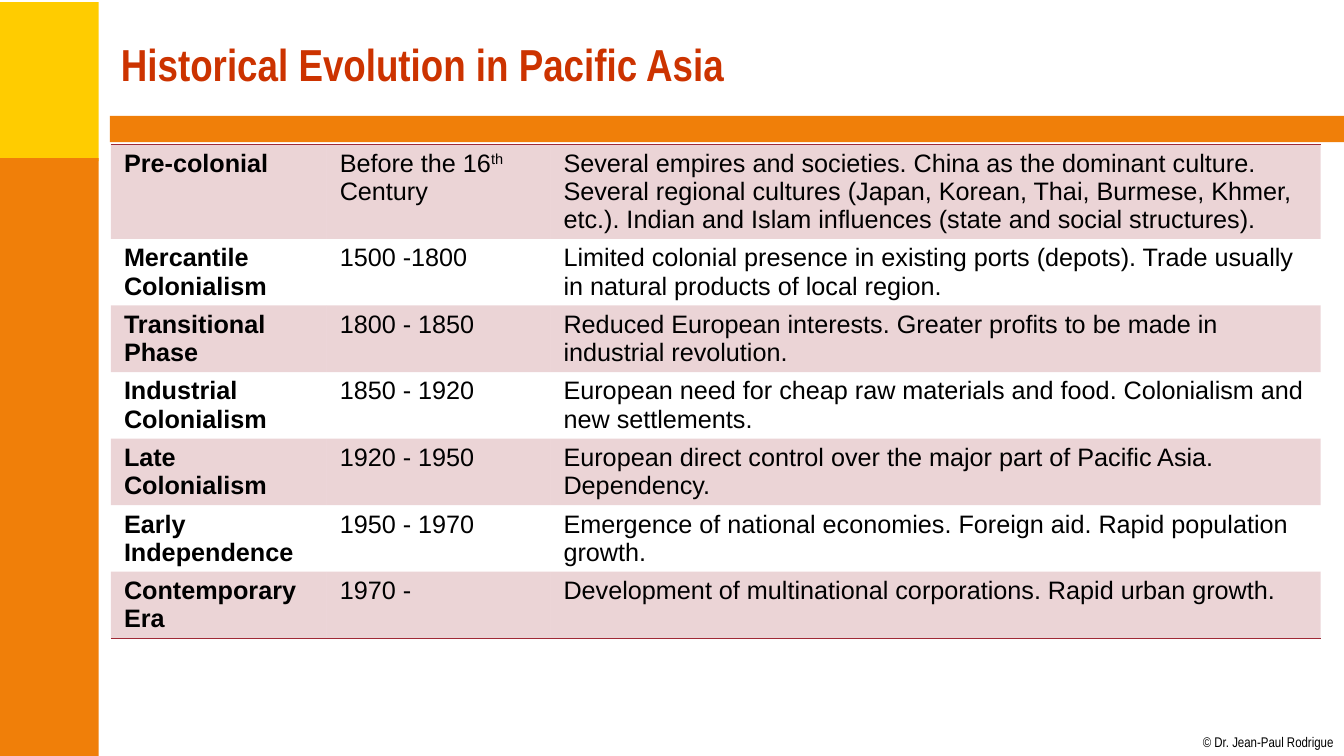
from dataclasses import dataclass

from lxml.etree import SubElement as Sub
from pptx import Presentation
from pptx.dml.color import RGBColor as Rgb
from pptx.enum.text import MSO_ANCHOR as Anchor, PP_ALIGN as Align
from pptx.enum.shapes import MSO_SHAPE as Kind
from pptx.oxml import parse_xml
from pptx.oxml.ns import nsdecls, qn
from pptx.util import Inches, Pt

HUES = {"gold": "FFCC00", "orange": "F07F09", "title": "CC3300",
        "wine": "9F2936", "text": "000000"}
PLAIN = "{2D5ABB26-0587-4C30-8999-92F81FD0307C}"  # table style without grid
WIDTHS = (2.14, 2.22, 7.64)


@dataclass
class Bar:
    left: float
    top: float
    width: float
    height: float
    hue: str


@dataclass
class Era:
    name: str
    years: str  # text between ^ marks is raised
    note: str


BARS = [
    Bar(-0.02, 0.02, 1, 1.58, "gold"),
    Bar(-0.02, 1.57, 1, 5.93, "orange"),
    Bar(1.09, 1.15, 12.24, 0.26, "orange"),
]
ERAS = [
    Era("Pre-colonial", "Before the 16^th^ Century",
        "Several empires and societies. China as the dominant culture. "
        "Several regional cultures (Japan, Korean, Thai, Burmese, Khmer, etc.). "
        "Indian and Islam influences (state and social structures)."),
    Era("Mercantile Colonialism", "1500 -1800",
        "Limited colonial presence in existing ports (depots). "
        "Trade usually in natural products of local region."),
    Era("Transitional Phase", "1800 - 1850",
        "Reduced European interests. "
        "Greater profits to be made in industrial revolution."),
    Era("Industrial Colonialism", "1850 - 1920",
        "European need for cheap raw materials and food. "
        "Colonialism and new settlements."),
    Era("Late Colonialism", "1920 - 1950",
        "European direct control over the major part of Pacific Asia. Dependency."),
    Era("Early Independence", "1950 - 1970",
        "Emergence of national economies. Foreign aid. Rapid population growth."),
    Era("Contemporary Era", "1970 -",
        "Development of multinational corporations. Rapid urban growth."),
]


def apply(item, form: dict) -> None:
    for key, value in form.items():
        setattr(item, key, value)


def place(item, left: float, top: float, width: float, height: float) -> None:
    apply(item, {"left": Inches(left), "top": Inches(top),
                 "width": Inches(width), "height": Inches(height)})


def write(para, text: str, font: str, size: float, hue: str, bold: bool) -> None:
    for i, part in enumerate(text.split("^")):
        run = para.add_run()
        run.text = part
        apply(run.font, {"name": font, "size": Pt(size), "bold": bold})
        run.font.color.rgb = Rgb.from_string(HUES[hue])
        if i % 2:
            run.font._element.set("baseline", "30000")


def draw_bar(slide, bar: Bar) -> None:
    shape = slide.shapes.add_shape(Kind.RECTANGLE, *map(
        Inches, (bar.left, bar.top, bar.width, bar.height)))
    shape.shadow.inherit = False
    shape.fill.solid()
    shape.fill.fore_color.rgb = Rgb.from_string(HUES[bar.hue])
    shape.line.fill.background()


def tint(cell, hue: str, share: int) -> None:
    cell.fill.solid()
    cell.fill.fore_color.rgb = Rgb.from_string(HUES[hue])
    color = cell._tc.tcPr.find(".//" + qn("a:srgbClr"))
    Sub(color, qn("a:alpha")).set("val", str(share * 1000))


def rule(cell, side: str, hue: str) -> None:
    cell._tc.get_or_add_tcPr().insert(0, parse_xml(
        f'<a:ln{side} {nsdecls("a")} w="12700"><a:solidFill>'
        f'<a:srgbClr val="{HUES[hue]}"/></a:solidFill></a:ln{side}>'))


def draw_table(slide, eras: list[Era]) -> None:
    frame = slide.shapes.add_table(len(eras), len(WIDTHS), Inches(1.1),
                                   Inches(1.43), Inches(12), Inches(4.32))
    table = frame.table
    apply(table, {"first_row": False, "horz_banding": False})
    table._tbl.tblPr.find(qn("a:tableStyleId")).text = PLAIN
    for col, width in zip(table.columns, WIDTHS):
        col.width = Inches(width)
    edges = {0: "T", len(eras) - 1: "B"}
    pads = {"margin_left": Inches(0.13), "margin_right": Inches(0.13),
            "margin_top": Inches(0.05), "margin_bottom": Inches(0.05)}
    for r, era in enumerate(eras):
        table.rows[r].height = Inches(0.41)
        for c, text in enumerate((era.name, era.years, era.note)):
            cell = table.cell(r, c)
            apply(cell, pads)
            write(cell.text_frame.paragraphs[0], text, "Arial", 18, "text", c == 0)
            if r % 2:
                cell.fill.background()
            else:
                tint(cell, "wine", 20)
            if r in edges:
                rule(cell, edges[r], "wine")
    frame.height = Inches(4.32)


def main() -> None:
    deck = Presentation()
    apply(deck, {"slide_width": Inches(13.33), "slide_height": Inches(7.5)})
    slide = deck.slides.add_slide(deck.slide_layouts[5])

    # Side and header bars
    for bar in BARS:
        draw_bar(slide, bar)

    # Title
    title = slide.shapes.title
    place(title, 1.1, 0.11, 12, 1.04)
    title.text_frame.vertical_anchor = Anchor.MIDDLE
    para = title.text_frame.paragraphs[0]
    para.alignment = Align.LEFT
    write(para, "Historical Evolution in Pacific Asia",
          "Arial Narrow", 32, "title", True)

    # Table of eras
    draw_table(slide, ERAS)

    # Copyright line
    box = slide.shapes.add_textbox(*map(Inches, (11.93, 7.28, 1.31, 0.17)))
    apply(box.text_frame, {"margin_left": 0, "margin_right": 0, "margin_top": 0,
                           "margin_bottom": 0, "word_wrap": False})
    write(box.text_frame.paragraphs[0], "© Dr. Jean-Paul Rodrigue",
          "Arial Narrow", 10, "text", False)

    deck.save("out.pptx")


if __name__ == "__main__":
    main()
